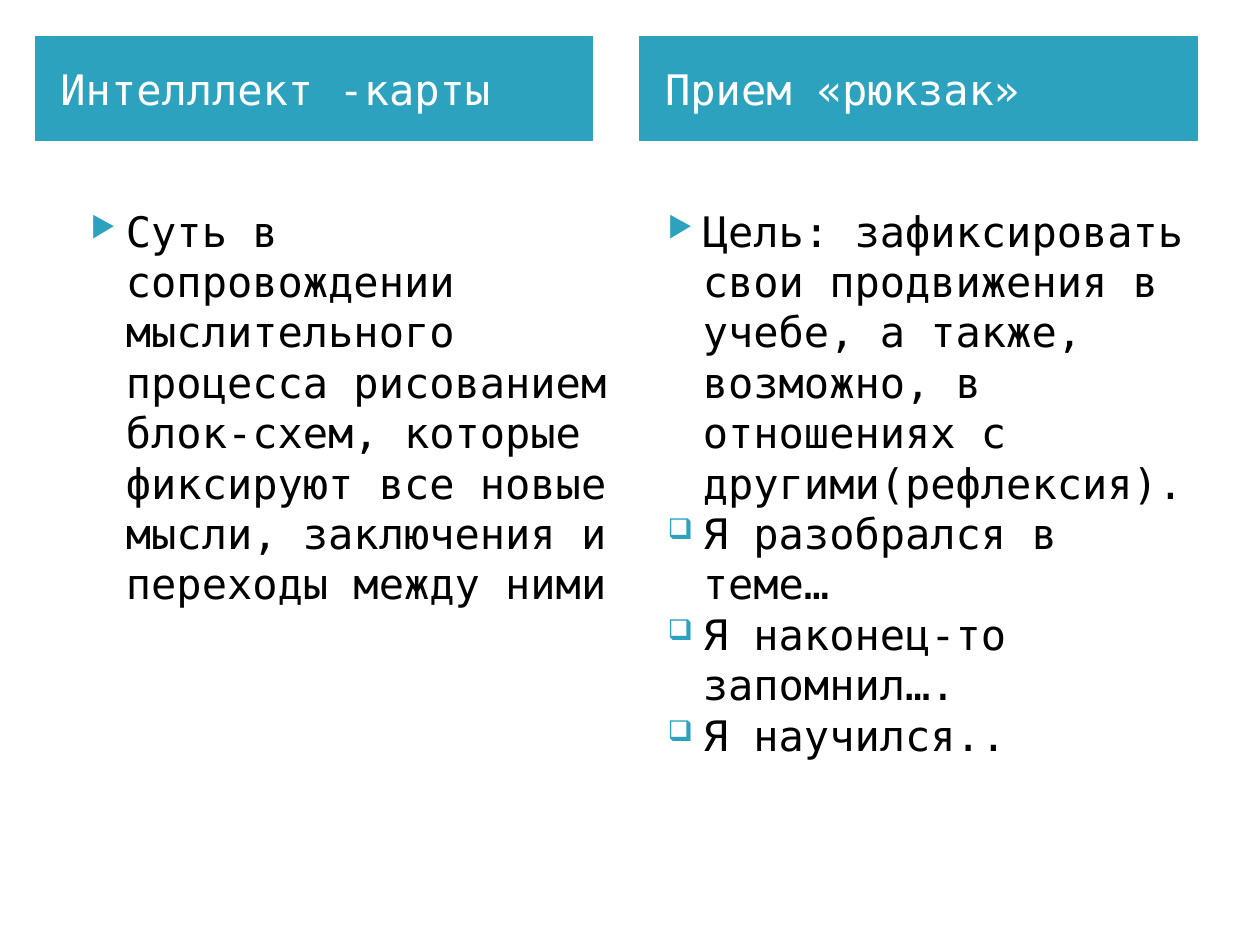
from dataclasses import dataclass
from lxml.etree import SubElement
from pptx import Presentation
from pptx.dml.color import RGBColor as Color
from pptx.enum.shapes import MSO_SHAPE as Shape
from pptx.enum.text import MSO_ANCHOR as Anchor, PP_ALIGN as Align
from pptx.oxml.ns import qn
from pptx.util import Cm, Pt


@dataclass(frozen=True)
class Theme:
    font: str = "DejaVu Sans Mono"
    size: float = 24
    accent: str = "2DA2BF"
    light: str = "FFFFFF"
    dark: str = "000000"
    bullet_percent: int = 68


theme = Theme()

ARROW, CHECKBOX = "▶", "❑"
COLUMNS = [
    {
        "heading": "Интелллект -карты",
        "heading_left": 0.71,
        "body_left": 1.27,
        "items": [
            (ARROW, "Суть в сопровождении мыслительного процесса рисованием "
                    "блок-схем, которые фиксируют все новые мысли, заключения "
                    "и переходы между ними"),
        ],
    },
    {
        "heading": "Прием «рюкзак»",
        "heading_left": 12.9,
        "body_left": 12.9,
        "items": [
            (ARROW, "Цель: зафиксировать свои продвижения в учебе, а также, "
                    "возможно, в отношениях с другими(рефлексия)."),
            (CHECKBOX, "Я разобрался в теме…"),
            (CHECKBOX, "Я наконец-то запомнил…."),
            (CHECKBOX, "Я научился.."),
        ],
    },
]

COLUMN_WIDTH = 11.23
HEADING_TOP, HEADING_HEIGHT = 0.73, 2.11
BODY_TOP, BODY_HEIGHT = 4.01, 10.95
INDENT, HANGING = 1.02, 0.71


def style_text(para, color):
    para.alignment = Align.LEFT
    para.font.name = theme.font
    para.font.size = Pt(theme.size)
    para.font.color.rgb = Color.from_string(color)


def add_bullet(para, symbol):
    properties = para._p.get_or_add_pPr()
    properties.set("marL", str(Cm(INDENT)))
    properties.set("indent", str(-Cm(HANGING)))
    color = SubElement(properties, qn("a:buClr"))
    SubElement(color, qn("a:srgbClr"), val=theme.accent)
    SubElement(properties, qn("a:buSzPct"), val=str(theme.bullet_percent * 1000))
    SubElement(properties, qn("a:buChar"), char=symbol)


def add_heading(page, left, text):
    box = page.shapes.add_shape(Shape.RECTANGLE, Cm(left), Cm(HEADING_TOP),
                                Cm(COLUMN_WIDTH), Cm(HEADING_HEIGHT))
    box.shadow.inherit = False
    box.fill.solid()
    box.fill.fore_color.rgb = Color.from_string(theme.accent)
    box.line.color.rgb = Color.from_string(theme.accent)
    box.line.width = Pt(0.75)
    frame = box.text_frame
    frame.word_wrap = True
    frame.vertical_anchor = Anchor.MIDDLE
    frame.margin_left = Cm(0.51)
    para = frame.paragraphs[0]
    para.text = text
    style_text(para, theme.light)


def add_body(page, left, items):
    box = page.shapes.add_textbox(Cm(left), Cm(BODY_TOP),
                                  Cm(COLUMN_WIDTH), Cm(BODY_HEIGHT))
    frame = box.text_frame
    frame.word_wrap = True
    for index, (symbol, text) in enumerate(items):
        para = frame.add_paragraph() if index else frame.paragraphs[0]
        para.text = text
        add_bullet(para, symbol)
        style_text(para, theme.dark)


def main():
    deck = Presentation()
    deck.slide_width, deck.slide_height = Cm(25.4), Cm(19.05)
    page = deck.slides.add_slide(deck.slide_layouts[6])
    for column in COLUMNS:
        add_heading(page, column["heading_left"], column["heading"])
    for column in COLUMNS:
        add_body(page, column["body_left"], column["items"])
    deck.save("out.pptx")


if __name__ == "__main__":
    main()
